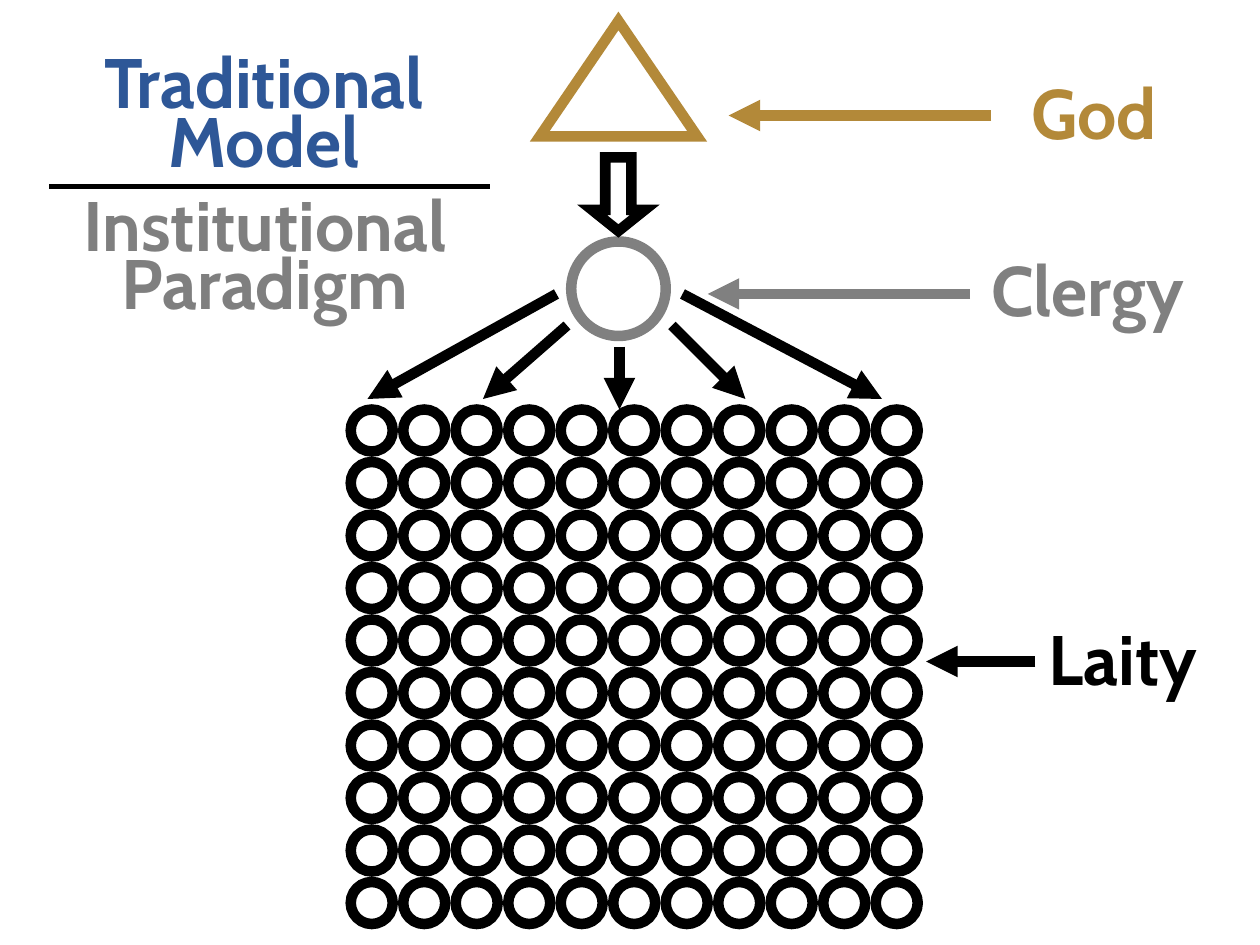
from pptx import Presentation
from pptx.dml.color import RGBColor
from pptx.enum.shapes import MSO_CONNECTOR, MSO_SHAPE
from pptx.enum.text import MSO_ANCHOR, MSO_AUTO_SIZE, PP_ALIGN
from pptx.oxml.ns import qn
from pptx.util import Emu, Pt
from lxml import etree

PX = 7620  # 120 px to the inch
TITLE_ONLY = 5
STRAIGHT = MSO_CONNECTOR.STRAIGHT
OVAL = MSO_SHAPE.OVAL
TRIANGLE = MSO_SHAPE.ISOSCELES_TRIANGLE
DOWN_ARROW = MSO_SHAPE.DOWN_ARROW
MIDDLE = MSO_ANCHOR.MIDDLE
GROW = MSO_AUTO_SIZE.SHAPE_TO_FIT_TEXT
CENTER = PP_ALIGN.CENTER

FONT = "Cabin"
COLORS = {
    "white": "FFFFFF",
    "black": "000000",
    "gold": "B38939",
    "gray": "808080",
    "paradigm": "7F7F7F",
    "blue": "2E5797",
}

# Laity grid
COLUMNS, ROWS = 11, 10
GRID_LEFT, GRID_TOP = 334, 390
PITCH, DOT = 50, 40

# Arrows from the clergy to the laity: start and end
FAN_ARROWS = [
    (530, 280, 350, 380),
    (540, 310, 460, 380),
    (590, 330, 590, 390),
    (640, 310, 710, 380),
    (650, 280, 840, 380),
]

# Role, colour, text box, arrow start x, arrow end x, arrow y
ROLES = [
    ("Clergy", "gray", (919, 229, 234, 92), 924, 674, 280),
    ("God", "gold", (966, 60, 152, 92), 944, 694, 110),
    ("Laity", "black", (977, 580, 185, 92), 986, 882, 630),
]


def px(value):
    return Emu(value * PX)


def color(name):
    return RGBColor.from_string(COLORS[name])


def add_outline(slide, kind, box, line_color):
    """White preset shape with a thick mitred outline."""
    shape = slide.shapes.add_shape(kind, *map(px, box))
    shape.shadow.inherit = False
    shape.fill.solid()
    shape.fill.fore_color.rgb = color("white")
    shape.line.color.rgb = color(line_color)
    shape.line.width = Pt(6)
    line = shape.element.spPr.find(qn("a:ln"))
    etree.SubElement(line, qn("a:miter"), lim="800000")
    return shape


def add_line(slide, points, line_color, width=6, arrow=True):
    connector = slide.shapes.add_connector(STRAIGHT, *map(px, points))
    connector.line.color.rgb = color(line_color)
    connector.line.width = Pt(width)
    properties = connector.element.spPr
    if arrow:
        etree.SubElement(properties.find(qn("a:ln")), qn("a:tailEnd"), type="triangle")
    etree.SubElement(properties, qn("a:effectLst"))


def write_text(shape, box, lines, text_color, spacing=None):
    """Place a text shape and fill it with one centred paragraph."""
    shape.left, shape.top, shape.width, shape.height = map(px, box)
    frame = shape.text_frame
    frame.word_wrap = False
    frame.auto_size = GROW
    frame.vertical_anchor = MIDDLE
    paragraph = frame.paragraphs[0]
    paragraph.alignment = CENTER
    if spacing:
        paragraph.line_spacing = spacing
    for index, line in enumerate(lines):
        if index:
            paragraph.add_line_break()
        run = paragraph.add_run()
        run.text = line
        run.font.name = FONT
        run.font.size = Pt(40)
        run.font.bold = True
        run.font.color.rgb = color(text_color)


def add_text(slide, box, lines, text_color, spacing=None):
    shape = slide.shapes.add_textbox(*map(px, box))
    write_text(shape, box, lines, text_color, spacing)


def add_laity_grid(slide):
    for row in range(ROWS):
        for column in range(COLUMNS):
            left = GRID_LEFT + column * PITCH
            top = GRID_TOP + row * PITCH
            add_outline(slide, OVAL, (left, top, DOT, DOT), "black")


def main():
    presentation = Presentation()
    presentation.slide_width = px(1200)
    presentation.slide_height = px(900)
    slide = presentation.slides.add_slide(presentation.slide_layouts[TITLE_ONLY])

    # Hierarchy: God, clergy, laity
    add_outline(slide, OVAL, (544, 230, 90, 90), "gray")
    add_outline(slide, TRIANGLE, (514, 20, 150, 110), "gold")
    down_arrow = add_outline(slide, DOWN_ARROW, (564, 150, 50, 70), "black")
    down_arrow.adjustments[0] = 0.5
    down_arrow.adjustments[1] = 0.4
    add_laity_grid(slide)
    for points in FAN_ARROWS:
        add_line(slide, points, "black")

    # Role labels with their arrows
    for role, role_color, box, start, end, y in ROLES:
        add_text(slide, box, [role], role_color)
        add_line(slide, (start, y, end, y), role_color)

    # Title, subtitle and the rule between them
    write_text(slide.shapes.title, (62, 52, 379, 125), ["Traditional", "Model"], "blue", 0.7)
    add_text(slide, (40, 188, 425, 125), ["Institutional", "Paradigm"], "paradigm", 0.7)
    add_line(slide, (47, 178, 467, 178), "black", width=3, arrow=False)

    presentation.save("out.pptx")


if __name__ == "__main__":
    main()
